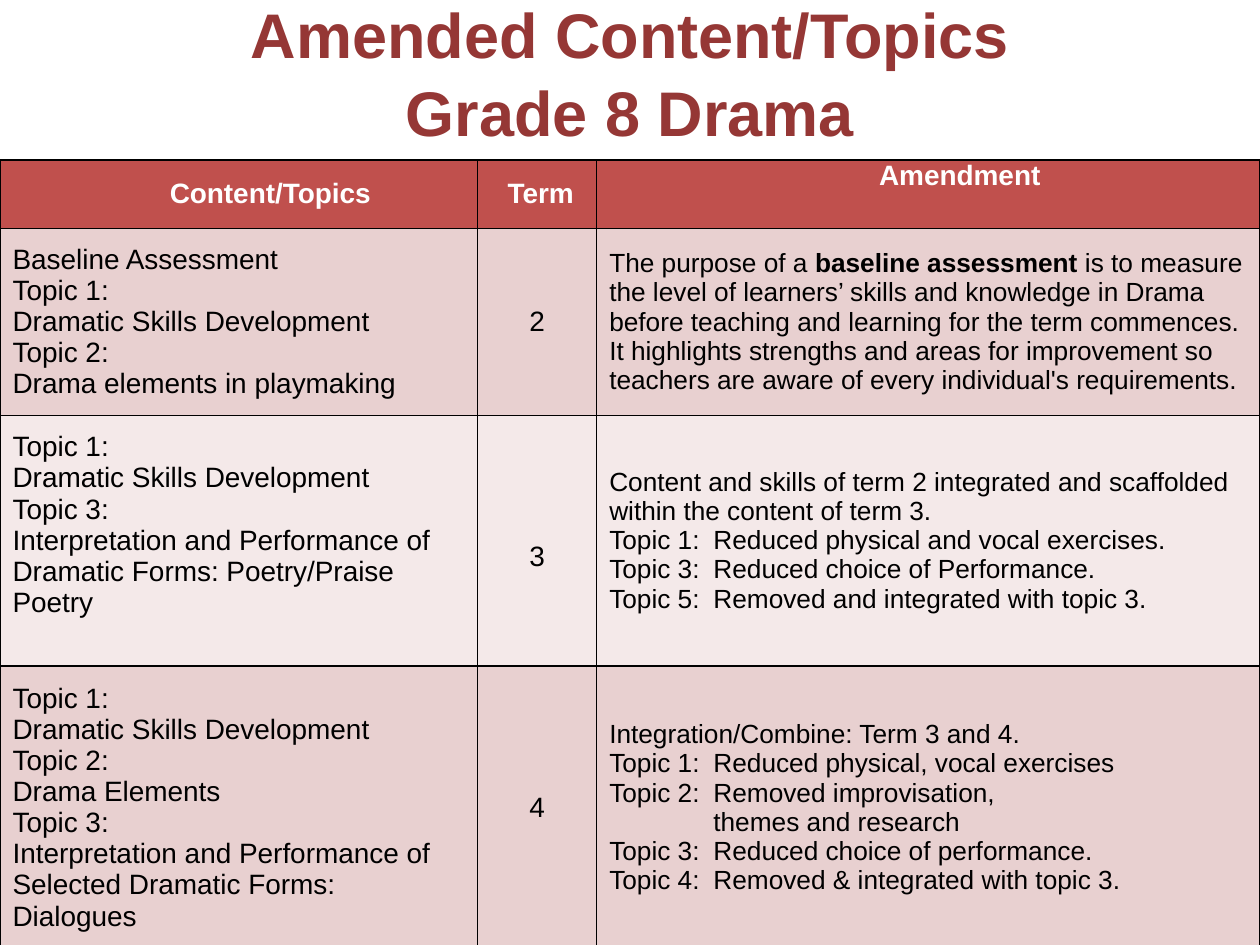
import pptx
import pptx.dml.color
import pptx.enum.text
import pptx.oxml
import pptx.oxml.ns
import pptx.util

Pt = pptx.util.Pt
ALIGN = pptx.enum.text.PP_ALIGN
ANCHOR = pptx.enum.text.MSO_ANCHOR
COLORS = {"title": "953735", "header": "C0504D", "white": "FFFFFF",
          "text": "000000", "band": "E8D0D0", "pale": "F4E9E9"}
HEADERS = [("Content/Topics", 36, ANCHOR.MIDDLE), ("Term", 4, ANCHOR.MIDDLE),
           ("Amendment", 36, ANCHOR.TOP)]
ROWS = [
    (["Baseline Assessment", "Topic 1:", "Dramatic Skills Development", "Topic 2:",
      "Drama elements in playmaking"],
     "2",
     ["The purpose of a **baseline assessment **is to measure the level of learners’ "
      "skills and knowledge in Drama before teaching and learning for the term commences.",
      "It highlights strengths and areas for improvement so teachers are aware of "
      "every individual's requirements."]),
    (["Topic 1:", "Dramatic Skills Development", "Topic 3:",
      "Interpretation and Performance of Dramatic Forms: Poetry/Praise Poetry"],
     "3",
     ["Content and skills of term 2 integrated and scaffolded within the content of term 3.",
      "Topic 1:\tReduced physical and vocal exercises.",
      "Topic 3:\tReduced choice of Performance.",
      "Topic 5:\tRemoved and integrated with topic 3."]),
    (["Topic 1:", "Dramatic Skills Development", "Topic 2:", "Drama Elements", "Topic 3:",
      "Interpretation and Performance of Selected Dramatic Forms: Dialogues"],
     "4",
     ["Integration/Combine: Term 3 and 4.",
      "Topic 1:\tReduced physical, vocal exercises",
      "Topic 2:\tRemoved improvisation,",
      ">themes and research",
      "Topic 3:\tReduced choice of performance.",
      "Topic 4:\tRemoved & integrated with topic 3."]),
]


class Deck:
    """Draws styled elements on the current slide."""

    font = "Arial"
    tab = 59.5

    def __init__(self, width, height):
        self.prs = pptx.Presentation()
        self.prs.slide_width, self.prs.slide_height = Pt(width), Pt(height)
        self.s = self.prs.slides.add_slide(self.prs.slide_layouts[6])

    def apply(self, obj, values):
        for name, value in values.items():
            setattr(obj, name, value)

    def rgb(self, key):
        return pptx.dml.color.RGBColor.from_string(COLORS[key])

    def fill_text(self, tf, lines, size, color="text", bold=False, indent=0, **form):
        for i, line in enumerate(lines):
            p = tf.paragraphs[0] if i == 0 else tf.add_paragraph()
            left = self.tab if line.startswith(">") else indent
            pPr = p._p.get_or_add_pPr()
            if left:
                pPr.set("marL", str(Pt(left)))
            if "\t" in line:
                pPr.append(pptx.oxml.parse_xml(
                    f'<a:tabLst {pptx.oxml.ns.nsdecls("a")}>'
                    f'<a:tab pos="{Pt(self.tab)}" algn="l"/></a:tabLst>'))
            self.apply(p, form)
            for j, part in enumerate(line.lstrip(">").split("**")):
                r = p.add_run()
                r.text = part
                self.apply(r.font, {"name": self.font, "size": Pt(size),
                                    "bold": bold or j % 2 == 1})
                r.font.color.rgb = self.rgb(color)

    def title(self, x, y, w, h, lines):
        tf = self.s.shapes.add_textbox(Pt(x), Pt(y), Pt(w), Pt(h)).text_frame
        self.apply(tf, {"word_wrap": True, "vertical_anchor": ANCHOR.MIDDLE})
        self.fill_text(tf, lines, 36, "title", True,
                       alignment=ALIGN.CENTER, line_spacing=1.04)

    def table(self, x, y, widths, heights):
        frame = self.s.shapes.add_table(len(heights), len(widths), Pt(x), Pt(y),
                                        Pt(sum(widths)), Pt(sum(heights)))
        table = frame.table
        self.apply(table, {"first_row": False, "horz_banding": False})
        for column, width in zip(table.columns, widths):
            column.width = Pt(width)
        for row, height in zip(table.rows, heights):
            row.height = Pt(height)
        return table

    def cell(self, cell, fill, lines, size, margins=(7.2, 3.6, 3.6),
             anchor=ANCHOR.MIDDLE, **form):
        side, top, bottom = margins
        self.apply(cell, {"margin_left": Pt(side), "margin_right": Pt(side),
                          "margin_top": Pt(top), "margin_bottom": Pt(bottom),
                          "vertical_anchor": anchor})
        tcPr = cell._tc.get_or_add_tcPr()
        for edge in "LRTB":
            tcPr.append(pptx.oxml.parse_xml(
                f'<a:ln{edge} {pptx.oxml.ns.nsdecls("a")} w="{Pt(1)}"><a:solidFill>'
                f'<a:srgbClr val="{COLORS["text"]}"/></a:solidFill></a:ln{edge}>'))
        cell.fill.solid()
        cell.fill.fore_color.rgb = self.rgb(fill)
        self.fill_text(cell.text_frame, lines, size, **form)


def main():
    deck = Deck(720, 540)
    deck.title(36, 1, 648, 79, ["Amended Content/Topics", "Grade 8 Drama"])
    table = deck.table(0, 91.5, [273, 68, 379], [39, 107, 143, 162])
    for c, (text, indent, anchor) in enumerate(HEADERS):
        deck.cell(table.cell(0, c), "header", [text], 16, (5, 0, 0), anchor,
                  color="white", bold=True, indent=indent, alignment=ALIGN.CENTER)
    for r, (topics, term, amendments) in enumerate(ROWS, 1):
        fill = "band" if r % 2 else "pale"
        shift = 18 if term == "3" else 0
        deck.cell(table.cell(r, 0), fill, topics, 16, (7.2, 3.6, 3.6 + shift))
        deck.cell(table.cell(r, 1), fill, [term], 16, (7.2, 3.6 + shift, 3.6),
                  alignment=ALIGN.CENTER)
        deck.cell(table.cell(r, 2), fill, amendments, 15)
    deck.prs.save("out.pptx")


if __name__ == "__main__":
    main()
